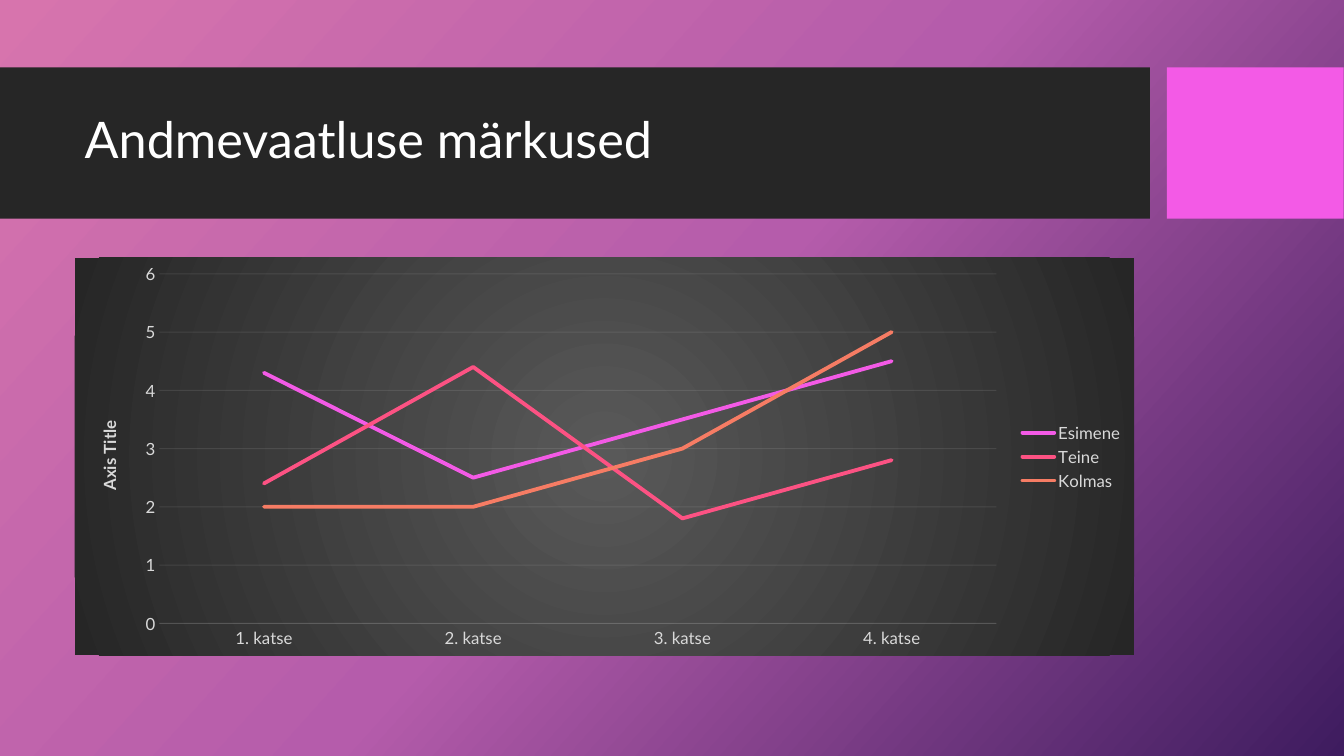
import pptx
import pptx.chart.data
import pptx.dml.color
import pptx.enum.chart
import pptx.enum.shapes
import pptx.enum.text
import pptx.oxml
import pptx.oxml.ns
import pptx.util
from pptx.util import Cm

FONT = "Lato"
DARK = "262626"
MAGENTA = "F35AE6"
LABEL = "D9D9D9"
GRID = "F2F2F2"
WHITE = "FFFFFF"

CATEGORIES = ["1. katse", "2. katse", "3. katse", "4. katse"]
SERIES = [
    ("Esimene", [4.3, 2.5, 3.5, 4.5], MAGENTA),
    ("Teine", [2.4, 4.4, 1.8, 2.8], "FC5283"),
    ("Kolmas", [2, 2, 3, 5], "F67C64"),
]
LINEAR = '<a:lin ang="2520000" scaled="0"/>'
RADIAL = (
    '<a:path path="circle">'
    '<a:fillToRect l="50000" t="50000" r="50000" b="50000"/></a:path>'
)


def rgb(value):
    return pptx.dml.color.RGBColor.from_string(value)


def style_font(font, size, color, bold=False):
    font.name = FONT
    font.size = pptx.util.Pt(size)
    font.bold = bold
    font.color.rgb = rgb(color)


def gradient_fill(stops, direction):
    """Return a gradFill element from (percent, colour) stops."""
    stop_xml = "".join(
        f'<a:gs pos="{percent * 1000}"><a:srgbClr val="{color}"/></a:gs>'
        for percent, color in stops
    )
    return pptx.oxml.parse_xml(
        f'<a:gradFill {pptx.oxml.ns.nsdecls("a")} rotWithShape="1">'
        f"<a:gsLst>{stop_xml}</a:gsLst>{direction}</a:gradFill>"
    )


def set_background(slide):
    slide.background.fill.solid()
    solid = slide.background._cSld.xpath("./p:bg/p:bgPr/a:solidFill")[0]
    stops = [(0, "D774AD"), (50, "B55CAB"), (100, "3E1C5F")]
    solid.getparent().replace(solid, gradient_fill(stops, LINEAR))


def add_band(slide, left, width, color):
    band = slide.shapes.add_shape(
        pptx.enum.shapes.MSO_SHAPE.RECTANGLE, left, Cm(1.7), width, Cm(3.81)
    )
    band.shadow.inherit = False
    band.fill.solid()
    band.fill.fore_color.rgb = rgb(color)
    band.line.fill.background()


def place_title(slide, text):
    """Fill the title placeholder and bring it in front of the bands."""
    title = slide.shapes.title
    title.left, title.top = Cm(1.88), Cm(2.08)
    title.width, title.height = Cm(26.7), Cm(3)
    frame = title.text_frame
    frame.word_wrap = True
    frame.vertical_anchor = pptx.enum.text.MSO_ANCHOR.MIDDLE
    paragraph = frame.paragraphs[0]
    paragraph.alignment = pptx.enum.text.PP_ALIGN.LEFT
    paragraph.line_spacing = 0.9
    run = paragraph.add_run()
    run.text = text
    style_font(run.font, 36, WHITE)
    title._element.getparent().append(title._element)


def style_faint_line(line):
    line.width = pptx.util.Pt(0.75)
    line.color.rgb = rgb(GRID)


def style_axis(axis):
    axis.major_tick_mark = pptx.enum.chart.XL_TICK_MARK.NONE
    axis.minor_tick_mark = pptx.enum.chart.XL_TICK_MARK.NONE
    style_font(axis.tick_labels.font, 12, LABEL)


def fade_lines(axis):
    """Make the axis line and gridlines 10 % opaque."""
    for color in axis._element.xpath(".//a:ln//a:srgbClr"):
        color.append(pptx.oxml.parse_xml(
            f'<a:alpha {pptx.oxml.ns.nsdecls("a")} val="10000"/>'
        ))


def style_axes(chart):
    category_axis, value_axis = chart.category_axis, chart.value_axis
    style_axis(category_axis)
    category_axis.has_major_gridlines = False
    style_faint_line(category_axis.format.line)

    style_axis(value_axis)
    value_axis.minimum_scale, value_axis.maximum_scale = 0, 6
    value_axis.major_unit = 1
    value_axis.has_major_gridlines = True
    style_faint_line(value_axis.major_gridlines.format.line)
    value_axis.format.line.fill.background()
    frame = value_axis.axis_title.text_frame
    run = frame.paragraphs[0].add_run()
    run.text = "Axis Title"
    style_font(run.font, 12, LABEL, bold=True)
    body = frame._txBody.bodyPr
    body.set("rot", "-5400000")
    body.set("vert", "horz")

    for axis in (category_axis, value_axis):
        fade_lines(axis)


def set_plot_layout(chart, **fractions):
    """Fix the inner plot area as fractions of the chart."""
    values = "".join(
        f'<c:{key} val="{value}"/>' for key, value in fractions.items()
    )
    plot_area = chart._chartSpace.chart.plotArea
    for layout in plot_area.xpath("./c:layout"):
        plot_area.remove(layout)
    plot_area.insert(0, pptx.oxml.parse_xml(
        f'<c:layout {pptx.oxml.ns.nsdecls("c")}><c:manualLayout>'
        '<c:layoutTarget val="inner"/><c:xMode val="edge"/>'
        f'<c:yMode val="edge"/>{values}</c:manualLayout></c:layout>'
    ))


def fill_chart_area(chart):
    properties = pptx.oxml.parse_xml(
        f'<c:spPr {pptx.oxml.ns.nsdecls("c", "a")}>'
        "<a:ln><a:noFill/></a:ln></c:spPr>"
    )
    properties.insert(0, gradient_fill([(0, "595959"), (100, DARK)], RADIAL))
    chart._chartSpace.chart.addnext(properties)


def add_line_chart(slide):
    data = pptx.chart.data.CategoryChartData()
    data.categories = CATEGORIES
    for name, values, _ in SERIES:
        data.add_series(name, values)
    chart = slide.shapes.add_chart(
        pptx.enum.chart.XL_CHART_TYPE.LINE,
        Cm(1.88), Cm(6.5), Cm(26.7), Cm(10.01), data,
    ).chart
    style_font(chart.font, 10, WHITE)
    chart.has_title = False
    chart.has_legend = True
    chart.legend.position = pptx.enum.chart.XL_LEGEND_POSITION.RIGHT
    chart.legend.include_in_layout = False
    style_font(chart.legend.font, 12, LABEL)
    chart.plots[0].vary_by_categories = False
    for series, (_, _, color) in zip(chart.plots[0].series, SERIES):
        series.smooth = False
        series.format.line.width = pptx.util.Pt(2.75)
        series.format.line.color.rgb = rgb(color)
        series._element.xpath("./c:spPr/a:ln")[0].set("cap", "rnd")
    style_axes(chart)
    set_plot_layout(chart, x=0.08, y=0.04, w=0.79, h=0.88)
    fill_chart_area(chart)


def main():
    presentation = pptx.Presentation()
    presentation.slide_width = Cm(33.87)
    presentation.slide_height = Cm(19.05)
    slide = presentation.slides.add_slide(presentation.slide_layouts[5])
    set_background(slide)
    add_band(slide, Cm(0), Cm(28.98), DARK)
    add_band(slide, Cm(29.41), Cm(4.45), MAGENTA)
    place_title(slide, "Andmevaatluse märkused")
    add_line_chart(slide)
    presentation.save("out.pptx")


if __name__ == "__main__":
    main()
